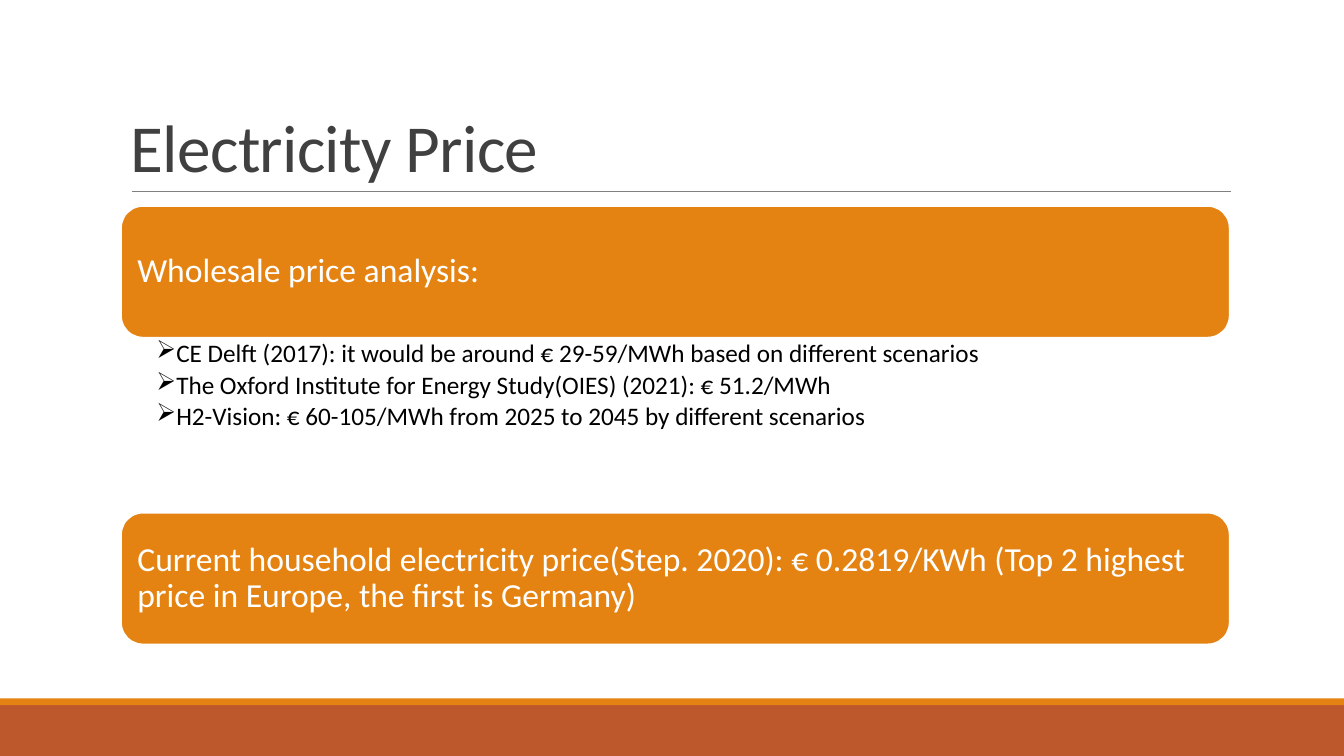
from dataclasses import dataclass

from lxml.etree import SubElement
from pptx import Presentation
from pptx.dml.color import RGBColor
from pptx.enum.shapes import MSO_CONNECTOR, MSO_SHAPE
from pptx.enum.text import MSO_ANCHOR, PP_ALIGN
from pptx.oxml.ns import qn
from pptx.util import Cm, Pt


@dataclass(frozen=True)
class Theme:
    font: str = "Calibri"
    orange: str = "E48312"
    rust: str = "BD582C"
    rule: str = "808080"
    title: str = "404040"
    light: str = "FFFFFF"
    dark: str = "000000"
    title_size: float = 48
    heading_size: float = 24
    bullet_size: float = 18


THEME = Theme()
SLIDE_WIDTH, SLIDE_HEIGHT = 33.87, 19.05
CONTENT_LEFT, CONTENT_WIDTH = 3.05, 27.94
CONTENT_TOP, SECTION_PITCH = 5.19, 7.73
PANEL_HEIGHT = 3.32

SECTIONS = [
    ("Wholesale price analysis:", [
        "CE Delft (2017): it would be around € 29-59/MWh based on different scenarios",
        "The Oxford Institute for Energy Study(OIES) (2021): € 51.2/MWh",
        "H2-Vision: € 60-105/MWh from 2025 to 2045 by different scenarios",
    ]),
    ("Current household electricity price(Step. 2020): € 0.2819/KWh "
     "(Top 2 highest price in Europe, the first is Germany)", []),
]


def color(value):
    return RGBColor.from_string(value)


def add_bullet(paragraph, symbol, indent):
    properties = paragraph._p.get_or_add_pPr()
    properties.set("marL", str(Cm(indent)))
    properties.set("indent", str(-Cm(indent)))
    SubElement(properties, qn("a:buChar")).set("char", symbol)


def write_text(shape, lines, *, size, fill, anchor=MSO_ANCHOR.TOP,
               align=PP_ALIGN.LEFT, insets=(0.25, 0.13, 0.25, 0.13),
               line_spacing=0.9, space_after=0, bullet=None, tracking=0):
    frame = shape.text_frame
    frame.word_wrap = True
    frame.vertical_anchor = anchor
    frame.margin_left, frame.margin_top, frame.margin_right, frame.margin_bottom = map(Cm, insets)
    for index, line in enumerate(lines):
        paragraph = frame.add_paragraph() if index else frame.paragraphs[0]
        if bullet:
            add_bullet(paragraph, bullet, 0.48)
        paragraph.alignment = align
        paragraph.line_spacing = line_spacing
        paragraph.space_after = Pt(space_after)
        run = paragraph.add_run()
        run.text = line
        run.font.name = THEME.font
        run.font.size = Pt(size)
        run.font.color.rgb = color(fill)
        if tracking:
            run.font._element.set("spc", str(round(tracking * 100)))


def add_block(slide, kind, box, fill, line=None):
    shape = slide.shapes.add_shape(kind, *map(Cm, box))
    shape.shadow.inherit = False
    shape.fill.solid()
    shape.fill.fore_color.rgb = color(fill)
    if line:
        shape.line.color.rgb = color(line)
        shape.line.width = Pt(1.25)
    else:
        shape.line.fill.background()
    return shape


def add_footer(slide, box):
    left, top, width, height = box
    stripe = 0.17
    add_block(slide, MSO_SHAPE.RECTANGLE, (left, top + stripe, width, height - stripe), THEME.rust)
    add_block(slide, MSO_SHAPE.RECTANGLE, (left, top, width, stripe), THEME.orange)


def add_title(slide, box, text):
    left, top, width, height = box
    bottom = Cm(top + height)
    rule = slide.shapes.add_connector(
        MSO_CONNECTOR.STRAIGHT, Cm(left + 0.28), bottom, Cm(left + width + 0.02), bottom)
    rule.line.color.rgb = color(THEME.rule)
    rule.line.width = Pt(0.5)
    SubElement(rule._element.spPr, qn("a:effectLst"))
    title = slide.shapes.add_textbox(*map(Cm, box))
    write_text(title, [text], size=THEME.title_size, fill=THEME.title,
               anchor=MSO_ANCHOR.BOTTOM, line_spacing=0.85, tracking=-0.5)


def add_section(slide, box, heading, bullets):
    left, top, width, height = box
    panel = add_block(slide, MSO_SHAPE.ROUNDED_RECTANGLE,
                      (left, top, width, PANEL_HEIGHT), THEME.orange, THEME.light)
    write_text(panel, [heading], size=THEME.heading_size, fill=THEME.light,
               anchor=MSO_ANCHOR.MIDDLE, insets=(0.25, 0.25, 0.25, 0.25))
    if bullets:
        details = slide.shapes.add_textbox(
            *map(Cm, (left, top + PANEL_HEIGHT, width, height - PANEL_HEIGHT)))
        write_text(details, bullets, size=THEME.bullet_size, fill=THEME.dark,
                   align=PP_ALIGN.JUSTIFY, insets=(0.89, 0.08, 0.36, 0.08),
                   space_after=3, bullet="➢")


def main():
    presentation = Presentation()
    presentation.slide_width = Cm(SLIDE_WIDTH)
    presentation.slide_height = Cm(SLIDE_HEIGHT)
    slide = presentation.slides.add_slide(presentation.slide_layouts[6])
    add_footer(slide, (0, 17.6, SLIDE_WIDTH, SLIDE_HEIGHT - 17.6))
    add_title(slide, (CONTENT_LEFT, 0.79, CONTENT_WIDTH, 4.04), "Electricity Price")
    for index, (heading, bullets) in enumerate(SECTIONS):
        top = CONTENT_TOP + index * SECTION_PITCH
        add_section(slide, (CONTENT_LEFT, top, CONTENT_WIDTH, SECTION_PITCH), heading, bullets)
    presentation.save("out.pptx")


if __name__ == "__main__":
    main()
